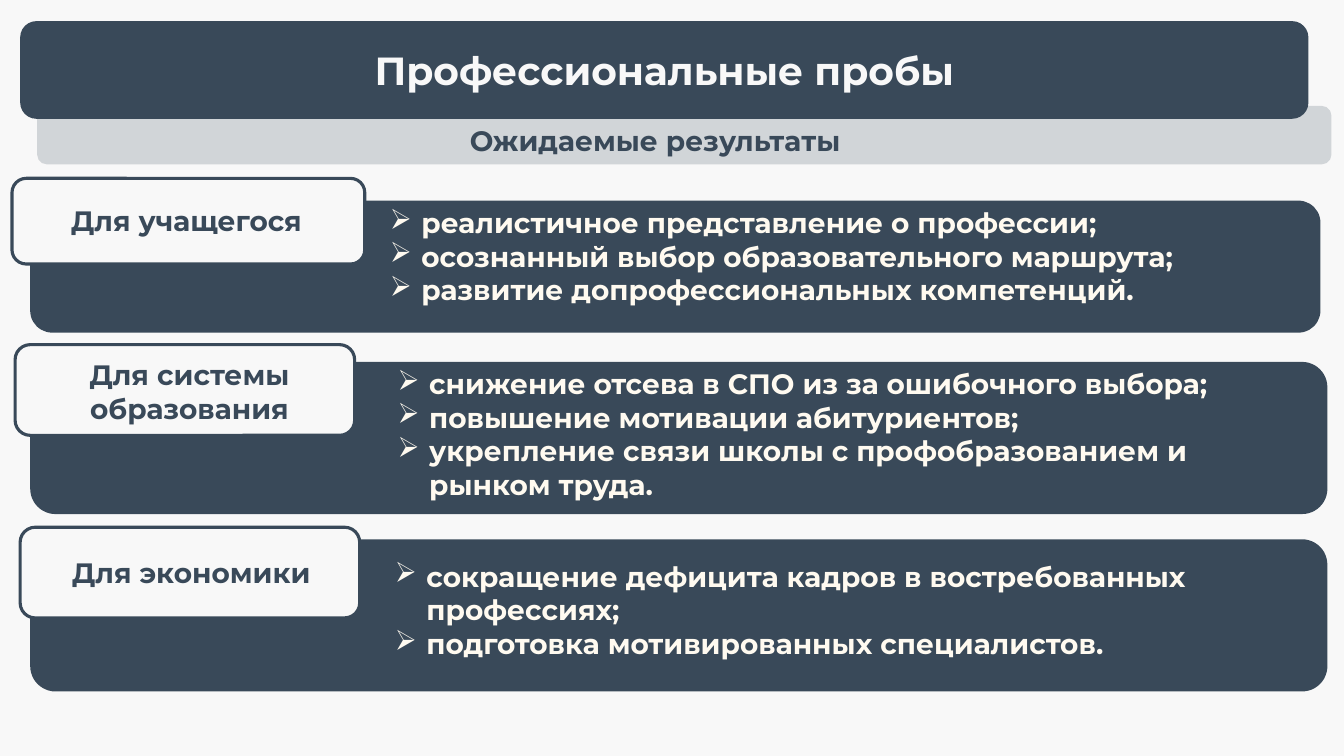
from dataclasses import dataclass
from typing import NamedTuple, Optional

from lxml import etree
from pptx import Presentation
from pptx.dml.color import RGBColor
from pptx.enum import shapes, text
from pptx.oxml import ns
from pptx.util import Pt


@dataclass(frozen=True)
class Theme:
    dark: str = "394959"
    light: str = "F8F8F8"
    cream: str = "FFFAF0"
    font: str = "Montserrat"
    title_size: float = 28
    body_size: float = 20
    outline: float = 2.25
    bullet_indent: float = 22.5
    tint_percent: int = 20


class Box(NamedTuple):
    left: float
    top: float
    width: float
    height: float


@dataclass(frozen=True)
class Section:
    heading: str
    results: tuple[str, ...]
    bar: Box
    card: Box
    heading_box: Box
    results_box: Box
    anchor: text.MSO_ANCHOR = text.MSO_ANCHOR.TOP


THEME = Theme()
TITLE_BOX = Box(14.4, 15.1, 920.2, 69.8)
SUBTITLE_BAR = Box(26.6, 75.6, 924.5, 41.8)
SUBTITLE_BOX = Box(38.2, 85, 859.7, 31.7)

SECTIONS = (
    Section(
        "Для учащегося",
        (
            "реалистичное представление о профессии;",
            "осознанный выбор образовательного маршрута;",
            "развитие допрофессиональных компетенций.",
        ),
        bar=Box(21.6, 143.3, 921.6, 94.3),
        card=Box(8.6, 127.4, 252, 61.2),
        heading_box=Box(7.2, 140.4, 252, 34.6),
        results_box=Box(267.1, 139, 651.6, 88.6),
    ),
    Section(
        "Для системы образования",
        (
            "снижение отсева в СПО из за ошибочного выбора;",
            "повышение мотивации абитуриентов;",
            "укрепление связи школы с профобразованием и рынком труда.",
        ),
        bar=Box(21.6, 258.5, 926.6, 108.7),
        card=Box(10.8, 246.2, 242.6, 64.8),
        heading_box=Box(9.4, 249.1, 252, 61.9),
        results_box=Box(270.7, 246.2, 678.2, 127.4),
        anchor=text.MSO_ANCHOR.MIDDLE,
    ),
    Section(
        "Для экономики",
        (
            "сокращение дефицита кадров в востребованных профессиях;",
            "подготовка мотивированных специалистов.",
        ),
        bar=Box(21.6, 385.2, 926.6, 108.7),
        card=Box(14.4, 376.6, 242.6, 64.8),
        heading_box=Box(10.8, 391.7, 252, 34.6),
        results_box=Box(270.7, 391.7, 658.1, 88.6),
    ),
)


def place(box: Box) -> tuple[Pt, ...]:
    return tuple(Pt(length) for length in box)


def add_rounded(slide, box: Box, fill: Optional[str] = None, line: Optional[str] = None):
    shape = slide.shapes.add_shape(shapes.MSO_SHAPE.ROUNDED_RECTANGLE, *place(box))
    shape.shadow.inherit = False
    if fill:
        shape.fill.solid()
        shape.fill.fore_color.rgb = RGBColor.from_string(fill)
    else:
        shape.fill.background()
    if line:
        shape.line.color.rgb = RGBColor.from_string(line)
        shape.line.width = Pt(THEME.outline)
    else:
        shape.line.fill.background()
    return shape


def set_bullet(paragraph) -> None:
    properties = paragraph._p.get_or_add_pPr()
    properties.set("marL", str(Pt(THEME.bullet_indent)))
    properties.set("indent", str(-Pt(THEME.bullet_indent)))
    etree.SubElement(properties, ns.qn("a:buChar"), char="➢")


def write(shape, *lines: str, color: str, size: float = THEME.body_size,
          align=text.PP_ALIGN.CENTER, anchor=text.MSO_ANCHOR.TOP,
          bullets: bool = False) -> None:
    frame = shape.text_frame
    frame.word_wrap = True
    frame.auto_size = text.MSO_AUTO_SIZE.NONE
    frame.vertical_anchor = anchor
    frame.text = "\n".join(lines)
    for paragraph in frame.paragraphs:
        paragraph.alignment = align
        if bullets:
            set_bullet(paragraph)
        for run in paragraph.runs:
            run.font.name = THEME.font
            run.font.size = Pt(size)
            run.font.bold = True
            run.font.color.rgb = RGBColor.from_string(color)


def add_header(slide) -> None:
    subtitle_bar = add_rounded(slide, SUBTITLE_BAR, THEME.dark)
    color = subtitle_bar._element.spPr.find(".//" + ns.qn("a:srgbClr"))
    etree.SubElement(color, ns.qn("a:alpha"), val=str(THEME.tint_percent * 1000))
    subtitle = slide.shapes.add_textbox(*place(SUBTITLE_BOX))
    write(subtitle, "Ожидаемые результаты", color=THEME.dark)

    add_rounded(slide, TITLE_BOX, THEME.dark)
    title = slide.shapes.title
    title.left, title.top, title.width, title.height = place(TITLE_BOX)
    write(title, "Профессиональные пробы", color=THEME.light,
          size=THEME.title_size, anchor=text.MSO_ANCHOR.MIDDLE)
    slide.shapes._spTree.append(title._element)


def add_section(slide, section: Section) -> None:
    add_rounded(slide, section.bar, THEME.dark)
    write(add_rounded(slide, section.results_box), *section.results,
          color=THEME.cream, align=text.PP_ALIGN.LEFT,
          anchor=section.anchor, bullets=True)
    add_rounded(slide, section.card, THEME.light, THEME.dark)
    write(add_rounded(slide, section.heading_box), section.heading, color=THEME.dark)


def main() -> None:
    presentation = Presentation()
    presentation.slide_width = Pt(960)
    presentation.slide_height = Pt(540)
    slide = presentation.slides.add_slide(presentation.slide_layouts[5])
    slide.background.fill.solid()
    slide.background.fill.fore_color.rgb = RGBColor.from_string(THEME.light)
    add_header(slide)
    for section in SECTIONS:
        add_section(slide, section)
    presentation.save("out.pptx")


if __name__ == "__main__":
    main()
